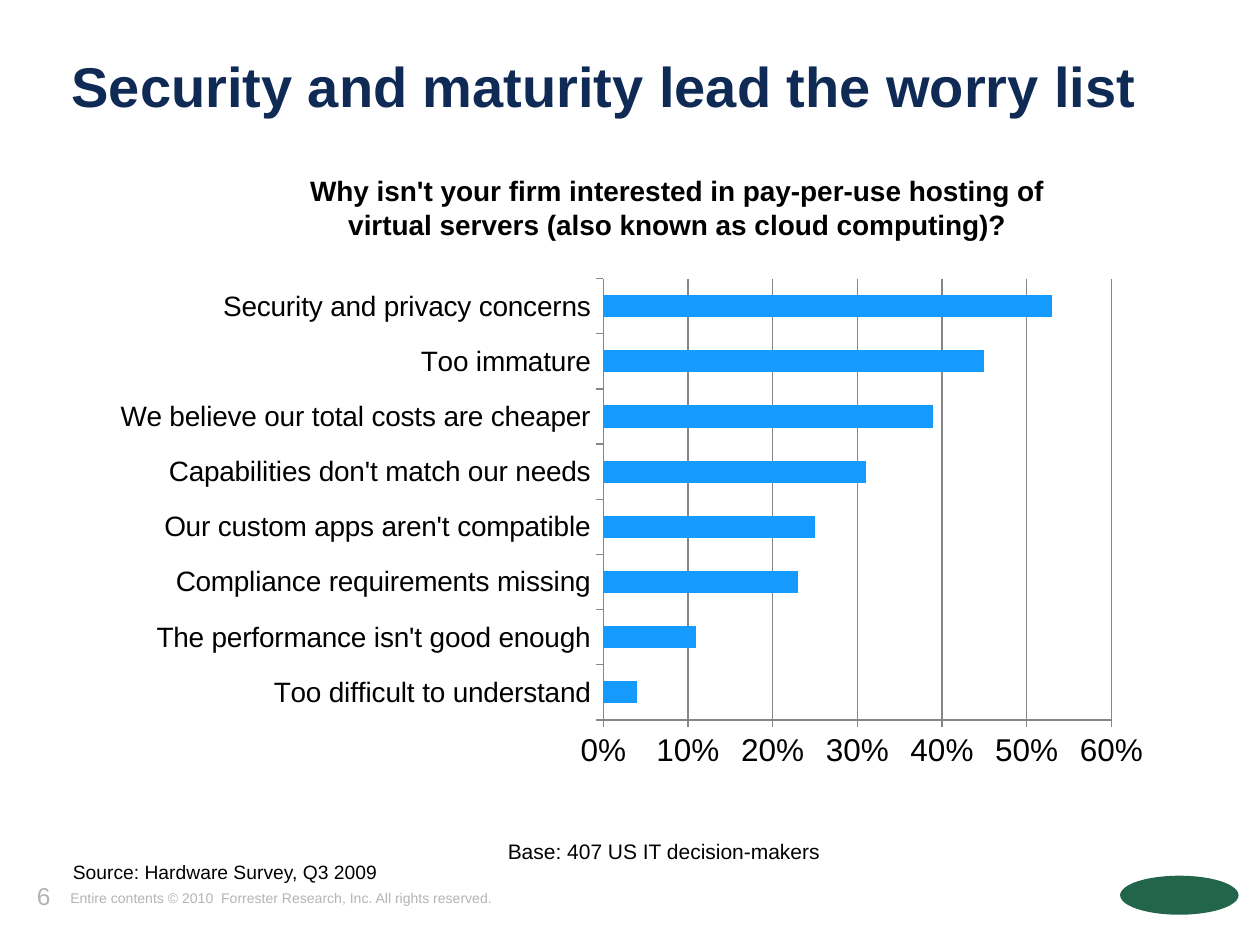
from dataclasses import dataclass

import pptx
import pptx.chart.data
import pptx.dml.color
import pptx.enum.chart
import pptx.enum.shapes
import pptx.enum.text
import pptx.oxml
import pptx.util
from pptx.util import Inches

FONT = "Arial"
NAVY, BLACK, GREY, WHITE = "0F2A55", "000000", "B4B4B4", "FFFFFF"
GREEN, BLUE, AXIS_GREY = "23654B", "159BFF", "868686"
LEFT, CENTER, RIGHT = (pptx.enum.text.PP_ALIGN.LEFT, pptx.enum.text.PP_ALIGN.CENTER,
                       pptx.enum.text.PP_ALIGN.RIGHT)
TOP, MIDDLE = pptx.enum.text.MSO_ANCHOR.TOP, pptx.enum.text.MSO_ANCHOR.MIDDLE

REASONS = {
    "Too difficult to understand": 0.04,
    "The performance isn't good enough": 0.11,
    "Compliance requirements missing": 0.23,
    "Our custom apps aren't compatible": 0.25,
    "Capabilities don't match our needs": 0.31,
    "We believe our total costs are cheaper": 0.39,
    "Too immature": 0.45,
    "Security and privacy concerns": 0.53,
}


@dataclass
class Label:
    text: str
    left: float
    top: float
    width: float
    height: float
    size: int
    color: str = BLACK
    bold: bool = False
    align: int = LEFT
    anchor: int = TOP
    wrap: bool = False
    spacing: float = 1.0


LABELS = [
    Label("6", 0.06, 6.94, 0.44, 0.33, 14, GREY, align=RIGHT),
    Label("Entire contents © 2010  Forrester Research, Inc. All rights reserved.",
          0.46, 7.01, 3.59, 0.23, 8, GREY, anchor=MIDDLE),
    Label("Security and maturity lead the worry list", 0.47, 0.42, 9, 0.45, 32, NAVY,
          bold=True, wrap=True, spacing=0.9),
    Label("Base: 407 US IT decision-makers", 3.92, 6.61, 2.7, 0.3, 12, align=CENTER),
    Label("Source: Hardware Survey, Q3 2009", 0.48, 6.78, 2.64, 0.29, 11),
    Label("Why isn't your firm interested in pay-per-use hosting of virtual servers "
          "(also known as cloud computing)?", 2.25, 1.33, 6.25, 0.64, 16,
          bold=True, align=CENTER, wrap=True),
]


def rgb(color: str) -> pptx.dml.color.RGBColor:
    return pptx.dml.color.RGBColor.from_string(color)


def set_font(font, size: int, color: str, bold: bool = False) -> None:
    font.name, font.size, font.bold = FONT, pptx.util.Pt(size), bold
    font.color.rgb = rgb(color)


def add_label(s, label: Label) -> None:
    sp = s.shapes.add_textbox(Inches(label.left), Inches(label.top),
                              Inches(label.width), Inches(label.height))
    tf = sp.text_frame
    tf.word_wrap, tf.vertical_anchor = label.wrap, label.anchor
    p = tf.paragraphs[0]
    p.text, p.alignment, p.line_spacing = label.text, label.align, label.spacing
    set_font(p.font, label.size, label.color, label.bold)


def set_plot_area(chart, x: float, y: float, w: float, h: float) -> None:
    """Fix the inner plot area, in fractions of the chart's size."""
    plot_area = chart._chartSpace.chart.plotArea
    for old in plot_area.findall(pptx.oxml.ns.qn("c:layout")):
        plot_area.remove(old)
    sizes = "".join(f'<c:{tag} val="{val}"/>'
                    for tag, val in zip("xywh", (x, y, w, h)))
    plot_area.insert(0, pptx.oxml.parse_xml(
        f'<c:layout {pptx.oxml.ns.nsdecls("c")}><c:manualLayout>'
        '<c:layoutTarget val="inner"/><c:xMode val="edge"/><c:yMode val="edge"/>'
        f'{sizes}</c:manualLayout></c:layout>'))


def style_line(line) -> None:
    line.color.rgb = rgb(AXIS_GREY)
    line.width = pptx.util.Pt(0.75)


def add_reasons_chart(s) -> None:
    data = pptx.chart.data.CategoryChartData(number_format="0%")
    data.categories = list(REASONS)
    data.add_series("Series 1", list(REASONS.values()))
    chart = s.shapes.add_chart(pptx.enum.chart.XL_CHART_TYPE.BAR_CLUSTERED, Inches(0.67),
                               Inches(2.17), Inches(8.58), Inches(4.17), data).chart
    chart.has_legend = chart.has_title = False
    set_font(chart.font, 18, BLACK)
    set_plot_area(chart, 0.48, 0.01, 0.47, 0.84)

    plot = chart.plots[0]
    plot.gap_width, plot.vary_by_categories = 150, False
    fill = plot.series[0].format.fill
    fill.solid()
    fill.fore_color.rgb = rgb(BLUE)

    for axis, size in ((chart.category_axis, 16), (chart.value_axis, 18)):
        set_font(axis.tick_labels.font, size, BLACK)
        axis.major_tick_mark = pptx.enum.chart.XL_TICK_MARK.OUTSIDE
        style_line(axis.format.line)
    axis = chart.value_axis
    axis.minimum_scale, axis.maximum_scale, axis.major_unit = 0, 0.6, 0.1
    axis.has_major_gridlines = True
    style_line(axis.major_gridlines.format.line)
    axis.tick_labels.number_format = "0%"
    axis.tick_labels.number_format_is_linked = False


def add_badge(s) -> None:
    sp = s.shapes.add_shape(pptx.enum.shapes.MSO_SHAPE.OVAL, Inches(8.89), Inches(6.95),
                            Inches(0.94), Inches(0.31))
    sp.shadow.inherit = False
    sp.fill.solid()
    sp.fill.fore_color.rgb = rgb(GREEN)
    sp.line.fill.background()


def main() -> None:
    prs = pptx.Presentation()
    prs.slide_width, prs.slide_height = Inches(10), Inches(7.5)
    s = prs.slides.add_slide(prs.slide_layouts[6])
    s.background.fill.solid()
    s.background.fill.fore_color.rgb = rgb(WHITE)
    add_badge(s)
    add_reasons_chart(s)
    for label in LABELS:
        add_label(s, label)
    prs.save("out.pptx")


if __name__ == "__main__":
    main()
